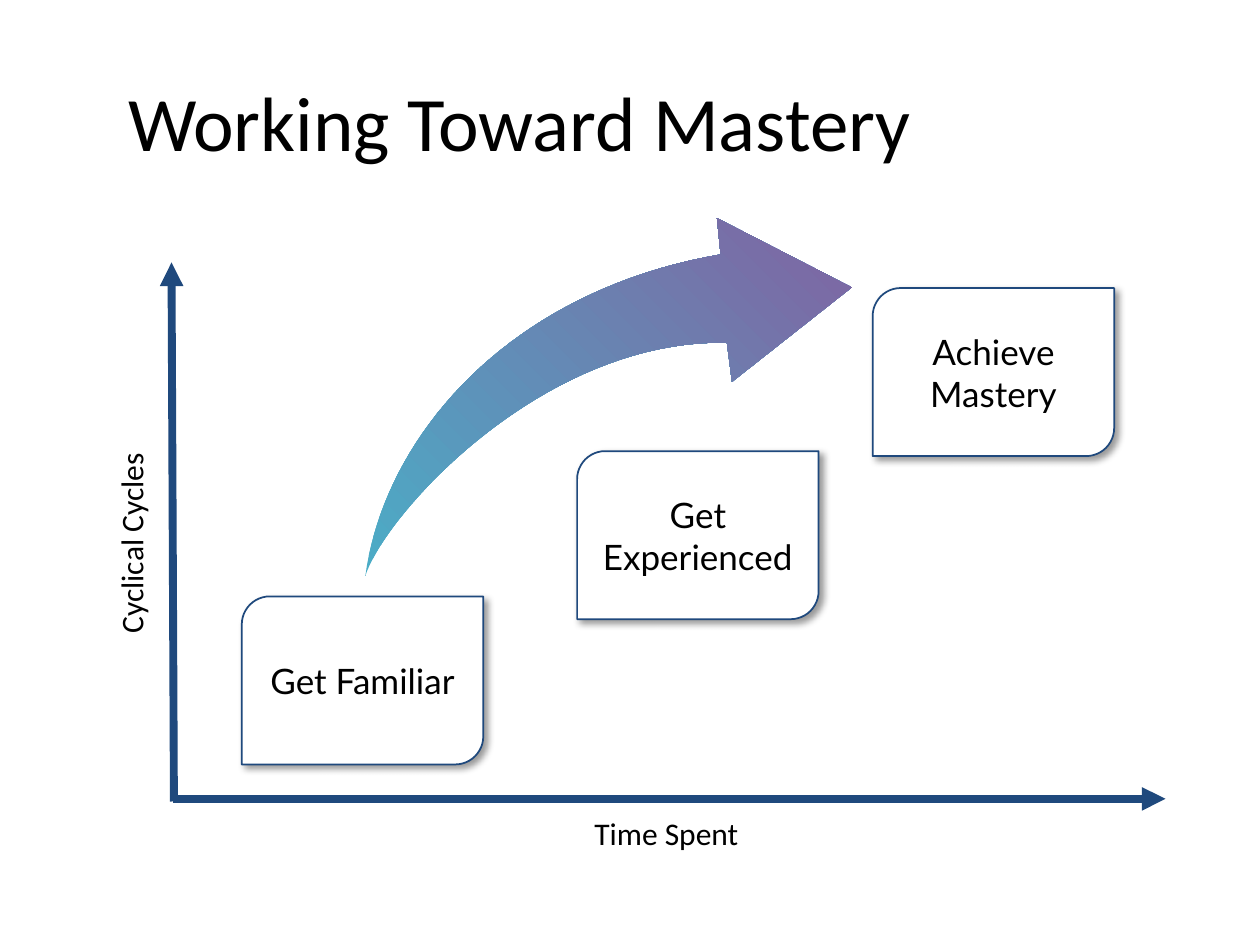
from lxml.etree import SubElement
from pptx import Presentation
from pptx.dml.color import RGBColor
from pptx.enum.shapes import MSO_CONNECTOR, MSO_SHAPE
from pptx.enum.text import MSO_ANCHOR, PP_ALIGN
from pptx.oxml.ns import qn
from pptx.util import Pt

COLORS = {
    "text": "000000",
    "navy": "1F497D",
    "white": "FFFFFF",
    "teal": "4BACC6",
    "purple": "8064A2",
}


def write(s, text, size=18, font="Calibri", align=PP_ALIGN.CENTER,
          anchor=MSO_ANCHOR.TOP, inset=None):
    tf = s.text_frame
    tf.word_wrap = True
    tf.vertical_anchor = anchor
    if inset is not None:
        tf.margin_left = tf.margin_right = Pt(inset)
        tf.margin_top = tf.margin_bottom = Pt(inset)
    p = tf.paragraphs[0]
    p.alignment = align
    r = p.add_run()
    r.text = text
    r.font.size = Pt(size)
    r.font.name = font
    r.font.color.rgb = RGBColor.from_string(COLORS["text"])


def bezier(p0, p1, p2, p3, steps=40):
    weights = [((1 - t) ** 3, 3 * t * (1 - t) ** 2, 3 * t * t * (1 - t), t ** 3)
               for t in (i / steps for i in range(1, steps + 1))]
    return [tuple(sum(w * q[axis] for w, q in zip(ws, (p0, p1, p2, p3)))
                  for axis in (0, 1)) for ws in weights]


prs = Presentation()
prs.slide_width, prs.slide_height = Pt(720), Pt(540)
slide = prs.slides.add_slide(prs.slide_layouts[5])
shapes = slide.shapes

title = shapes.title
title.left, title.top, title.width, title.height = Pt(66), Pt(24), Pt(636), Pt(90)
write(title, "Working Toward Mastery", size=44, align=PP_ALIGN.LEFT,
      anchor=MSO_ANCHOR.MIDDLE)

for x1, y1, x2, y2 in [(98.6, 456.5, 666, 456.5), (99.4, 458, 98, 150)]:
    axis = shapes.add_connector(MSO_CONNECTOR.STRAIGHT, Pt(x1), Pt(y1), Pt(x2), Pt(y2))
    axis.line.width = Pt(4.5)
    axis.line.color.rgb = RGBColor.from_string(COLORS["navy"])
    SubElement(axis.line._get_or_add_ln(), qn("a:tailEnd"), type="triangle")
    SubElement(axis._element.spPr, qn("a:effectLst"))

for text, x, y, w, angle in [("Time Spent", 113.8, 461.5, 534, 0),
                             ("Cyclical Cycles", -71.3, 296, 292.3, 270)]:
    label = shapes.add_textbox(Pt(x), Pt(y), Pt(w), Pt(29))
    label.rotation = angle
    write(label, text)

for text, x, y in [("Get Familiar", 138.2, 340.8),
                   ("Get Experienced", 329.8, 257.8),
                   ("Achieve Mastery", 498.7, 164.6)]:
    s = shapes.add_shape(MSO_SHAPE.ROUND_2_DIAG_RECTANGLE, Pt(x), Pt(y), Pt(138), Pt(96))
    s.fill.solid()
    s.fill.fore_color.rgb = RGBColor.from_string(COLORS["white"])
    s.line.color.rgb = RGBColor.from_string(COLORS["navy"])
    s.line.width = Pt(1)
    s.shadow.inherit = False
    effects = s._element.spPr.find(qn("a:effectLst"))
    shadow = SubElement(effects, qn("a:outerShdw"), blurRad=str(Pt(4)), dist=str(Pt(3)),
                        dir="2700000", algn="tl", rotWithShape="0")
    color = SubElement(shadow, qn("a:srgbClr"), val=COLORS["text"])
    SubElement(color, qn("a:alpha"), val="40000")
    write(s, text, size=20, font="Lato", anchor=MSO_ANCHOR.MIDDLE, inset=3.6)

tail = (208.8, 329)
outer = bezier(tail, (219.6, 249.8), (290.2, 166.3), (411.8, 145.4))
head = [(409.7, 124.6), (486.7, 164.2), (418.3, 218.2), (415.4, 195.8)]
inner = bezier(head[-1], (311, 193.7), (221, 292.3), tail)
builder = shapes.build_freeform(Pt(tail[0]), Pt(tail[1]))
builder.add_line_segments([(Pt(x), Pt(y)) for x, y in outer + head + inner])
arrow = builder.convert_to_shape()
arrow.shadow.inherit = False
arrow.line.fill.background()
arrow.fill.gradient()
arrow.fill.gradient_angle = 45
for stop, name, position in zip(arrow.fill.gradient_stops, ("teal", "purple"), (0, 1)):
    stop.color.rgb = RGBColor.from_string(COLORS[name])
    stop.position = position

prs.save("out.pptx")
